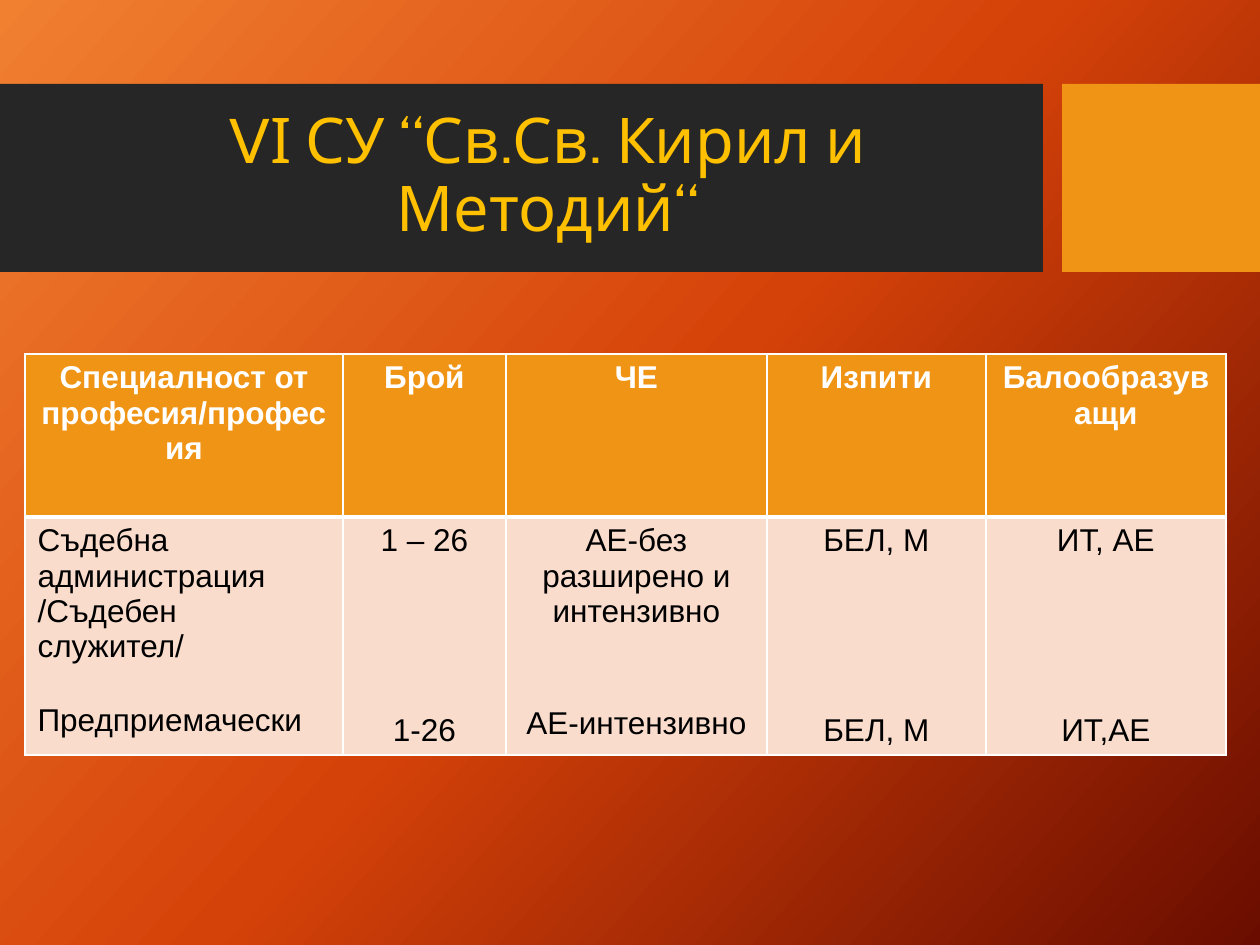
from copy import deepcopy
from dataclasses import dataclass

from pptx import Presentation
from pptx.dml.color import RGBColor
from pptx.enum import shapes, text
from pptx.oxml import parse_xml
from pptx.oxml.ns import nsdecls, qn
from pptx.util import Emu, Pt

PX_PER_INCH = 126


@dataclass(frozen=True)
class Theme:
    gradient: tuple = ((0, "F18031"), (0.5, "D54209"), (1, "6A0D00"))
    gradient_angle: int = 318
    dark: str = "262626"
    accent: str = "F09415"
    title: str = "FFC000"
    body: str = "000000"
    white: str = "FFFFFF"
    cell: str = "F9DCCC"
    title_font: str = "Cabin"
    table_font: str = "Arial"
    title_size: int = 36
    table_size: int = 18


THEME = Theme()
CENTER, LEFT = text.PP_ALIGN.CENTER, text.PP_ALIGN.LEFT

COLUMNS = (318, 163, 261, 219, 240)
ROWS = (163, 238)
HEADERS = ("Специалност от професия/професия", "Брой", "ЧЕ", "Изпити",
           "Балообразуващи")
# Paragraphs of each cell, and the space in points before the last one
DETAILS = (
    (("Съдебна администрация", "/Съдебен служител/", "Предприемачески"), 22),
    (("1 – 26", "1-26"), 88),
    (("АЕ-без разширено и интензивно", "АЕ-интензивно"), 44),
    (("БЕЛ, М", "БЕЛ, М"), 88),
    (("ИТ, АЕ", "ИТ,АЕ"), 88),
)


def px(n):
    return Emu(round(n * 914400 / PX_PER_INCH))


def rgb(value):
    return RGBColor.from_string(value)


def write(tf, paragraphs, *, font, size, color, bold=False, align=CENTER,
          line_spacing=None, last_gap=None):
    """Fill a text frame with equally formatted paragraphs."""
    for i, line in enumerate(paragraphs):
        p = tf.paragraphs[0] if i == 0 else tf.add_paragraph()
        p.alignment = align
        if line_spacing:
            p.line_spacing = line_spacing
        r = p.add_run()
        r.text = line
        r.font.name, r.font.size, r.font.bold = font, Pt(size), bold
        r.font.color.rgb = rgb(color)
    if last_gap:
        p.space_before = Pt(last_gap)


def paint_background(s):
    fill = s.background.fill
    fill.gradient()
    fill.gradient_angle = THEME.gradient_angle
    stops = s.element.find(".//" + qn("a:gsLst"))
    stops.append(deepcopy(stops[0]))
    for stop, (position, color) in zip(fill.gradient_stops, THEME.gradient):
        stop.position = position
        stop.color.rgb = rgb(color)


def add_bar(s, left, width, color):
    sp = s.shapes.add_shape(shapes.MSO_SHAPE.RECTANGLE,
                            px(left), px(84), px(width), px(188))
    sp.shadow.inherit = False
    sp.fill.solid()
    sp.fill.fore_color.rgb = rgb(color)
    sp.line.fill.background()
    return sp


def add_title(s, title):
    sp = s.shapes.title
    sp.left, sp.top, sp.width, sp.height = px(73), px(103), px(950), px(149)
    tf = sp.text_frame
    tf.word_wrap = True
    tf.auto_size = text.MSO_AUTO_SIZE.NONE
    tf.vertical_anchor = text.MSO_ANCHOR.MIDDLE
    write(tf, [title], font=THEME.title_font, size=THEME.title_size,
          color=THEME.title, line_spacing=0.9)
    # Bring the title in front of the bars
    s.shapes.element.append(sp.element)


def set_borders(cell, **widths):
    tc_pr = cell._tc.get_or_add_tcPr()
    for i, (side, width) in enumerate(widths.items()):
        tc_pr.insert(i, parse_xml(
            f'<a:ln{side} {nsdecls("a")} w="{Pt(width)}"><a:solidFill>'
            f'<a:srgbClr val="{THEME.white}"/></a:solidFill></a:ln{side}>'))


def format_cell(cell, paragraphs, fill, top, bottom, **fmt):
    cell.fill.solid()
    cell.fill.fore_color.rgb = rgb(fill)
    set_borders(cell, L=1, R=1, T=top, B=bottom)
    write(cell.text_frame, paragraphs, font=THEME.table_font,
          size=THEME.table_size, **fmt)


def add_details_table(s):
    table = s.shapes.add_table(len(ROWS), len(COLUMNS), px(25), px(354),
                               px(sum(COLUMNS)), px(sum(ROWS))).table
    for row, height in zip(table.rows, ROWS):
        row.height = px(height)
    for i, width in enumerate(COLUMNS):
        table.columns[i].width = px(width)
        format_cell(table.cell(0, i), [HEADERS[i]], THEME.accent, 1, 3,
                    color=THEME.white, bold=True)
        paragraphs, gap = DETAILS[i]
        format_cell(table.cell(1, i), paragraphs, THEME.cell, 3, 1,
                    color=THEME.body, align=CENTER if i else LEFT,
                    last_gap=gap)


def main():
    prs = Presentation()
    prs.slide_width, prs.slide_height = px(1260), px(945)
    s = prs.slides.add_slide(prs.slide_layouts[5])
    paint_background(s)

    # Title band
    add_bar(s, 0, 1043, THEME.dark)
    add_bar(s, 1062, 198, THEME.accent)
    add_title(s, "VІ СУ “Св.Св. Кирил и Методий“")

    # Specialities and admission details
    add_details_table(s)
    prs.save("out.pptx")


if __name__ == "__main__":
    main()
